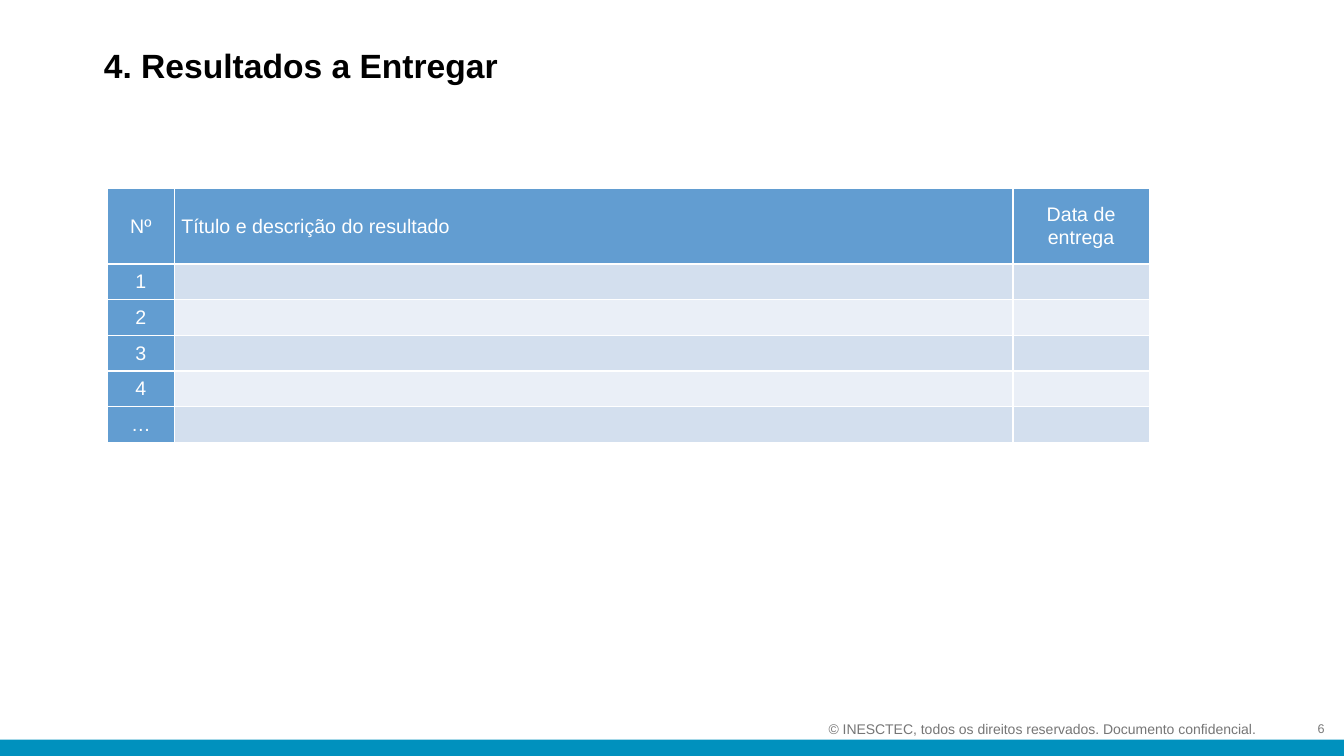
from dataclasses import dataclass

from lxml import etree
from pptx import Presentation, util as u
from pptx.dml.color import RGBColor
from pptx.enum import shapes, text
from pptx.oxml import ns

ALIGN = text.PP_ALIGN
MID = text.MSO_ANCHOR.MIDDLE


@dataclass(frozen=True)
class Theme:
    """Colours, font and type sizes of the slide."""
    font: str = "Arial"
    black: str = "000000"
    white: str = "FFFFFF"
    head: str = "629DD1"
    bands: tuple = ("D3DFEE", "EAEFF7")
    bar: str = "0091BE"
    note: str = "767676"
    page: str = "797979"
    title: int = 24
    body: int = 14
    small: int = 10
    tiny: int = 9


T = Theme()


def paint(fill, color):
    """Give a fill one solid colour."""
    fill.solid()
    fill.fore_color.rgb = RGBColor.from_string(color)


def write(frame, words, size=T.body, color=T.white, bold=False,
          align=ALIGN.LEFT, gap=0):
    """Write one formatted paragraph in a text frame."""
    para = frame.paragraphs[0]
    para.alignment = align
    para.space_before = para.space_after = u.Pt(gap)
    run = para.add_run()
    run.text = words
    font = run.font
    font.name, font.size, font.bold = T.font, u.Pt(size), bold
    font.color.rgb = RGBColor.from_string(color)


def label(slide, box, words, anchor=text.MSO_ANCHOR.TOP, **form):
    """Place a text box, given as left, top, width and height in cm."""
    frame = slide.shapes.add_textbox(*map(u.Cm, box)).text_frame
    frame.word_wrap = True
    frame.vertical_anchor = anchor
    write(frame, words, **form)


def border(cell):
    """Draw thin white lines round a cell."""
    props = cell._tc.get_or_add_tcPr()
    for side in "LRTB":
        line = etree.SubElement(props, ns.qn(f"a:ln{side}"), w=str(u.Pt(1)))
        fill = etree.SubElement(line, ns.qn("a:solidFill"))
        etree.SubElement(fill, ns.qn("a:srgbClr"), val=T.white)


def results(slide, box):
    """Build the table of results inside the box."""
    left, top, width, height = box
    number, date, row = 1.68, 3.43, 0.9
    names = ("Nº", "Título e descrição do resultado", "Data de entrega")
    rows = [names] + [(mark, "", "") for mark in "1234…"]
    grid = slide.shapes.add_table(len(rows), len(names), *map(u.Cm, box)).table
    for col, size in zip(grid.columns, (number, width - number - date, date)):
        col.width = u.Cm(size)
    for i, words in enumerate(rows):
        grid.rows[i].height = u.Cm(row if i else height - row * (len(rows) - 1))
        for j, word in enumerate(words):
            cell = grid.cell(i, j)
            cell.margin_left = cell.margin_right = u.Cm(0.18)
            cell.margin_top = cell.margin_bottom = 0
            cell.vertical_anchor = MID
            border(cell)
            paint(cell.fill, T.bands[(i - 1) % 2] if i and j else T.head)
            if word:
                write(cell.text_frame, word, gap=3,
                      align=ALIGN.JUSTIFY if j == 1 else ALIGN.CENTER)


def footer(slide, box):
    """Place the notice, the bar and the page number in the bottom strip."""
    left, top, width, height = box
    thick = 0.41
    label(slide, (left + 20.63, top, 11.8, 0.76),
          "© INESCTEC, todos os direitos reservados. Documento confidencial.",
          size=T.small, color=T.note)
    bar = slide.shapes.add_shape(
        shapes.MSO_SHAPE.RECTANGLE,
        *map(u.Cm, (left, top + height - thick, width, thick)))
    bar.shadow.inherit = False
    paint(bar.fill, T.bar)
    bar.line.fill.background()
    label(slide, (left + 26.01, top, 7.62, 0.65), "6", anchor=MID,
          size=T.tiny, color=T.page, align=ALIGN.RIGHT)


def main():
    """Build and save the slide."""
    deck = Presentation()
    deck.slide_width, deck.slide_height = u.Cm(33.87), u.Cm(19.05)
    slide = deck.slides.add_slide(deck.slide_layouts[6])
    footer(slide, (0, 18.03, 33.87, 1.02))
    label(slide, (2.37, 1, 29.24, 1.9), "4. Resultados a Entregar",
          size=T.title, color=T.black, bold=True)
    results(slide, (2.71, 4.75, 26.25, 6.4))
    deck.save("out.pptx")


if __name__ == "__main__":
    main()
